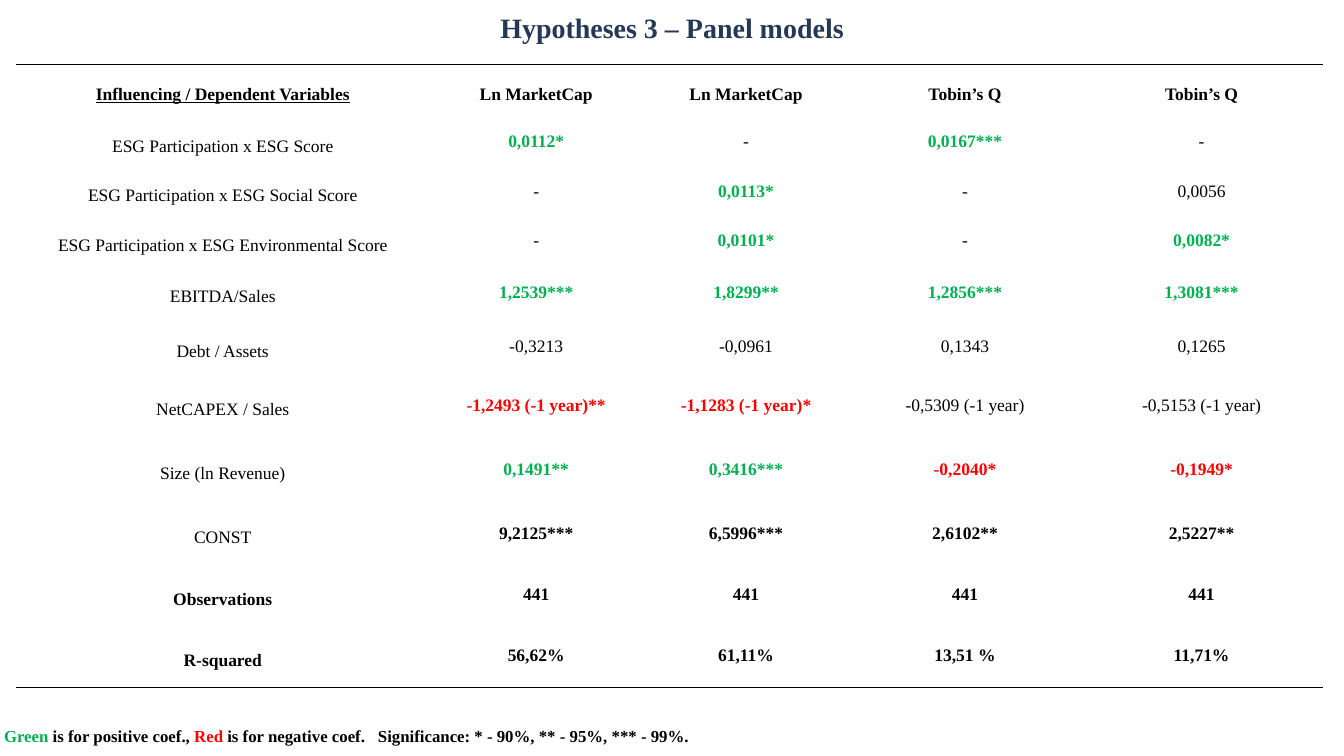
from dataclasses import dataclass

import pptx
import pptx.dml.color
import pptx.enum.text
import pptx.oxml
import pptx.oxml.ns
import pptx.util

RGBColor = pptx.dml.color.RGBColor
PP_ALIGN = pptx.enum.text.PP_ALIGN
MSO_ANCHOR = pptx.enum.text.MSO_ANCHOR
MSO_AUTO_SIZE = pptx.enum.text.MSO_AUTO_SIZE

EMU_PER_PX = 9144
FONT = "Times New Roman"
NAVY = RGBColor(0x25, 0x39, 0x57)
GREEN = RGBColor(0x00, 0xB0, 0x50)
RED = RGBColor(0xFF, 0x00, 0x00)
BLACK = RGBColor(0x00, 0x00, 0x00)
NO_STYLE = "{2D5ABB26-0587-4C30-8999-92F81FD0307C}"
NSDECL = pptx.oxml.ns.nsdecls("a")

COL_WIDTHS = [822, 422, 411, 458, 481]


@dataclass(frozen=True)
class Box:
    left: int
    top: int
    width: int
    height: int


@dataclass(frozen=True)
class ModelRow:
    label: str
    values: tuple[str, ...]
    height: int
    bold_label: bool = False
    bold_values: bool = False
    header: bool = False


ROWS = [
    ModelRow("Influencing / Dependent Variables",
             ("Ln MarketCap", "Ln MarketCap", "Tobin’s Q", "Tobin’s Q"),
             104, True, True, True),
    ModelRow("ESG Participation x ESG Score", ("0,0112*", "-", "0,0167***", "-"), 99),
    ModelRow("ESG Participation x ESG Social Score", ("-", "0,0113*", "-", "0,0056"), 99),
    ModelRow("ESG Participation x ESG Environmental Score",
             ("-", "0,0101*", "-", "0,0082*"), 99),
    ModelRow("EBITDA/Sales", ("1,2539***", "1,8299**", "1,2856***", "1,3081***"), 104),
    ModelRow("Debt / Assets", ("-0,3213", "-0,0961", "0,1343", "0,1265"), 111),
    ModelRow("NetCAPEX / Sales",
             ("-1,2493 (-1 year)**", "-1,1283 (-1 year)*",
              "-0,5309 (-1 year)", "-0,5153 (-1 year)"), 122),
    ModelRow("Size (ln Revenue)", ("0,1491**", "0,3416***", "-0,2040*", "-0,1949*"), 132),
    ModelRow("CONST", ("9,2125***", "6,5996***", "2,6102**", "2,5227**"),
             122, bold_values=True),
    ModelRow("Observations", ("441",) * 4, 122, True, True),
    ModelRow("R-squared", ("56,62%", "61,11%", "13,51 %", "11,71%"), 122, True, True),
]


def px(n: int) -> pptx.util.Emu:
    return pptx.util.Emu(n * EMU_PER_PX)


def set_attrs(obj, values: dict) -> None:
    for name, value in values.items():
        setattr(obj, name, value)


def add_run(p, text: str, size: int, color: RGBColor, bold: bool = True,
            underline: bool = False) -> None:
    r = p.add_run()
    r.text = text
    set_attrs(r.font, {"name": FONT, "size": pptx.util.Pt(size), "bold": bold,
                       "underline": underline})
    r.font.color.rgb = color


def format_box(sp, box: Box):
    set_attrs(sp, {"left": px(box.left), "top": px(box.top),
                   "width": px(box.width), "height": px(box.height)})
    tf = sp.text_frame
    set_attrs(tf, {"word_wrap": True, "auto_size": MSO_AUTO_SIZE.SHAPE_TO_FIT_TEXT,
                   "vertical_anchor": MSO_ANCHOR.MIDDLE,
                   "margin_left": px(8), "margin_right": px(8),
                   "margin_top": px(8), "margin_bottom": px(8)})
    return tf.paragraphs[0]


def add_border(cell, side: str) -> None:
    tc_pr = cell._tc.get_or_add_tcPr()
    tc_pr.insert(0, pptx.oxml.parse_xml(
        f'<a:{side} {NSDECL} w="{pptx.util.Pt(1)}"><a:solidFill>'
        f'<a:srgbClr val="{BLACK}"/></a:solidFill></a:{side}>'))


def fill_cell(cell, text: str, color: RGBColor, bold: bool, underline: bool,
              spacing: float) -> None:
    set_attrs(cell, {"vertical_anchor": MSO_ANCHOR.MIDDLE,
                     "margin_left": px(5), "margin_right": px(5),
                     "margin_top": 0, "margin_bottom": 0})
    cell.fill.background()
    p = cell.text_frame.paragraphs[0]
    set_attrs(p, {"alignment": PP_ALIGN.CENTER, "line_spacing": spacing})
    add_run(p, text, 25, color, bold, underline)


def add_row(table, i: int, row: ModelRow) -> None:
    table.rows[i].height = px(row.height)
    fill_cell(table.cell(i, 0), row.label, BLACK, row.bold_label, row.header, 1.5)
    for j, value in enumerate(row.values, 1):
        significant = value.endswith("*")
        color = BLACK
        if significant and not row.bold_values:
            color = RED if value.startswith("-") else GREEN
        fill_cell(table.cell(i, j), value, color, row.bold_values or significant,
                  False, 1.5 if row.header else 1.0)


def add_models(s, left: int, top: int) -> None:
    height = sum(row.height for row in ROWS)
    table = s.shapes.add_table(len(ROWS), len(COL_WIDTHS), px(left), px(top),
                               px(sum(COL_WIDTHS)), px(height)).table
    set_attrs(table, {"first_row": False, "horz_banding": False})
    table._tbl.tblPr.find(pptx.oxml.ns.qn("a:tableStyleId")).text = NO_STYLE
    for column, width in zip(table.columns, COL_WIDTHS):
        column.width = px(width)
    for i, row in enumerate(ROWS):
        add_row(table, i, row)
    for j in range(len(COL_WIDTHS)):
        add_border(table.cell(0, j), "lnT")
        add_border(table.cell(len(ROWS) - 1, j), "lnB")


def add_legend(s, box: Box) -> None:
    sp = s.shapes.add_textbox(0, 0, 0, 0)
    p = format_box(sp, box)
    p._p.get_or_add_pPr().append(pptx.oxml.parse_xml(
        f'<a:tabLst {NSDECL}><a:tab pos="{px(742)}" algn="l"/></a:tabLst>'))
    for text, color in [
        ("Green ", GREEN),
        ("is for positive coef., ", BLACK),
        ("Red ", RED),
        ("is for negative coef.\tSignificance: * - 90%, ** - 95%, *** - 99%.", BLACK),
    ]:
        add_run(p, text, 24, color)


def main() -> None:
    prs = pptx.Presentation()
    set_attrs(prs, {"slide_width": px(2667), "slide_height": px(1500)})
    s = prs.slides.add_slide(prs.slide_layouts[5])
    p = format_box(s.shapes.title, Box(0, 12, 2667, 83))
    p.alignment = PP_ALIGN.CENTER
    add_run(p, "Hypotheses 3 – Panel models", 40, NAVY)
    add_models(s, 31, 127)
    add_legend(s, Box(0, 1431, 2667, 56))
    prs.save("out.pptx")


if __name__ == "__main__":
    main()
